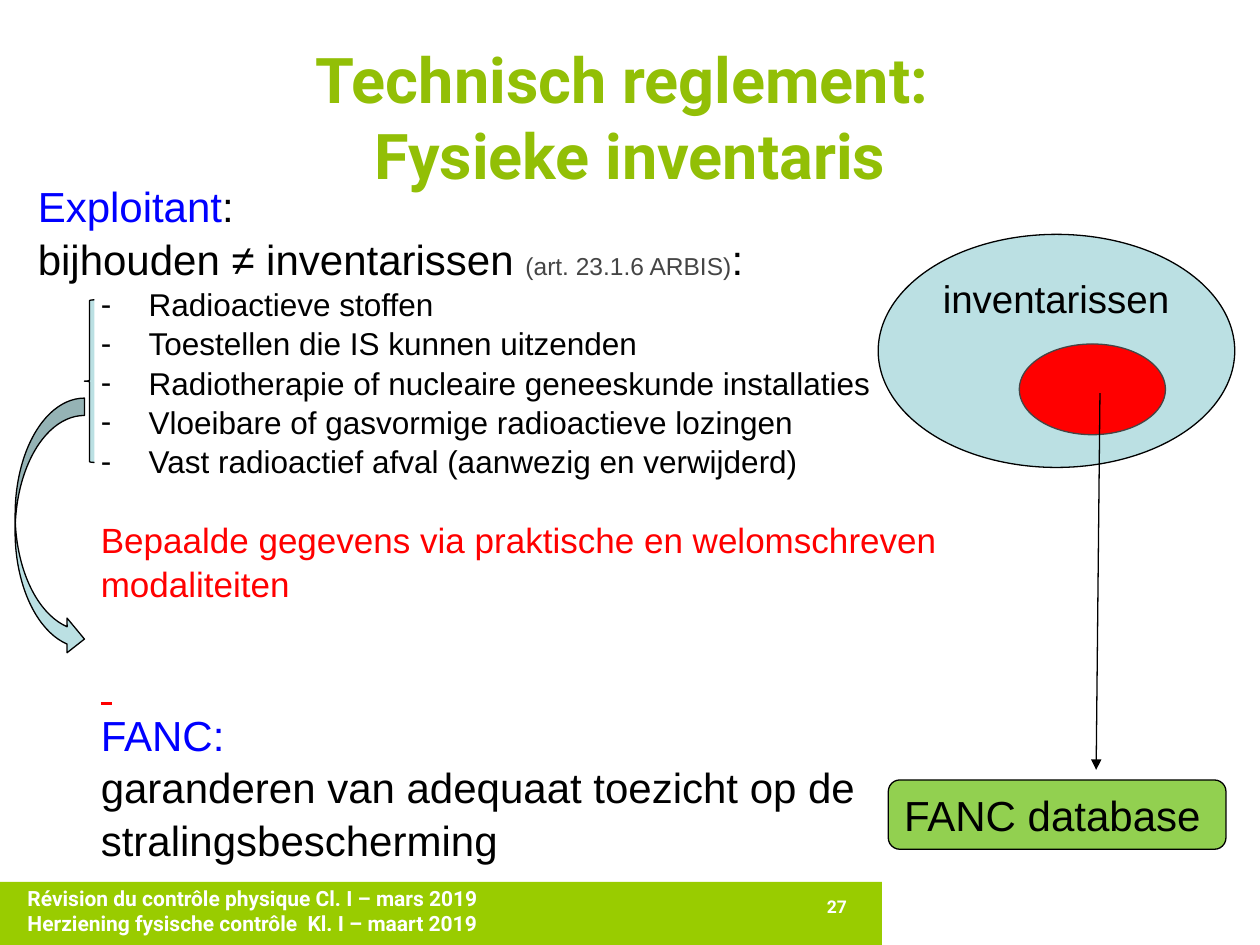
from typing import NamedTuple, Optional

from lxml import etree
from pptx import Presentation
from pptx.dml.color import RGBColor
from pptx.enum.shapes import MSO_CONNECTOR, MSO_SHAPE as Shape
from pptx.enum.text import MSO_ANCHOR, MSO_AUTO_SIZE, PP_ALIGN
from pptx.oxml.ns import qn
from pptx.util import Inches, Pt

COLORS = {
    "title": "92BF06", "bar": "99CC00", "pale": "BBE0E3", "red": "FF0000",
    "blue": "0000FF", "green": "92D050", "grey": "454545",
    "black": "000000", "white": "FFFFFF",
}


class Run(NamedTuple):
    text: str
    size: float = 24
    color: str = "black"
    underline: bool = False


class Para(NamedTuple):
    runs: list[Run]
    left: float = 0
    hanging: float = 0
    bullet: Optional[str] = None
    before: float = 0
    level: int = 0


class Figure(NamedTuple):
    kind: Shape
    box: tuple[float, float, float, float]
    fill: str
    line: Optional[str] = "black"
    label: str = ""
    size: float = 24


ITEMS = [
    "Radioactieve stoffen",
    "Toestellen die IS kunnen uitzenden",
    "Radiotherapie of nucleaire geneeskunde installaties",
    "Vloeibare of gasvormige radioactieve lozingen",
    "Vast radioactief afval (aanwezig en verwijderd)",
]

BODY = [
    Para([Run("Exploitant", color="blue"), Run(":")]),
    Para([Run("bijhouden ≠ inventarissen "),
          Run("(art. 23.1.6 ARBIS)", 14, "grey"), Run(":")]),
    *[Para([Run(item, 18)], 0.88, -0.38, "-", level=1) for item in ITEMS],
    Para([Run("Bepaalde gegevens via praktische en welomschreven modaliteiten",
              20, "red")], 0.5, before=21, level=1),
    Para([Run(" ", color="red", underline=True)], 0.5, before=29),
    Para([Run("FANC:", color="blue")], 0.5),
    Para([Run("garanderen van adequaat toezicht op de stralingsbescherming")], 0.5),
]

FIGURES = [
    Figure(Shape.RECTANGLE, (0, 7, 7, 0.5), "bar", None),
    Figure(Shape.OVAL, (6.97, 1.86, 2.83, 1.85), "pale", label="inventarissen", size=22),
    Figure(Shape.OVAL, (8.09, 2.73, 1.16, 0.72), "red", "grey"),
    Figure(Shape.ROUNDED_RECTANGLE, (7.05, 6.19, 2.68, 0.55), "green", label="FANC database"),
    Figure(Shape.LEFT_BRACE, (0.67, 2.38, 0.08, 1.29), "pale"),
    Figure(Shape.CURVED_RIGHT_ARROW, (0.12, 3.16, 0.55, 2.05), "pale"),
]


def rgb(name: str) -> RGBColor:
    return RGBColor.from_string(COLORS[name])


def place(sp, box: tuple[float, float, float, float]) -> None:
    sp.left, sp.top, sp.width, sp.height = map(Inches, box)


def add_text(p, text: str, *, size: float, color: str = "black", font: str = "Arial",
             bold: bool = False, underline: bool = False) -> None:
    """Add runs to a paragraph, with a line break at each newline."""
    for i, line in enumerate(text.split("\n")):
        if i:
            p.add_line_break()
        r = p.add_run()
        r.text = line
        f = r.font
        f.name, f.size, f.bold, f.underline = font, Pt(size), bold, underline
        f.color.rgb = rgb(color)


def add_para(p, para: Para) -> None:
    p.level = para.level
    p.line_spacing = 1.04
    p.space_before, p.space_after = Pt(para.before), Pt(0)
    pPr = p._p.get_or_add_pPr()
    pPr.set("marL", str(Inches(para.left)))
    pPr.set("indent", str(Inches(para.hanging)))
    if para.bullet:
        etree.SubElement(pPr, qn("a:buChar")).set("char", para.bullet)
    else:
        etree.SubElement(pPr, qn("a:buNone"))
    for run in para.runs:
        add_text(p, run.text, size=run.size, color=run.color, underline=run.underline)


def add_figure(s, figure: Figure) -> None:
    sp = s.shapes.add_shape(figure.kind, *map(Inches, figure.box))
    sp.shadow.inherit = False
    sp.fill.solid()
    sp.fill.fore_color.rgb = rgb(figure.fill)
    if figure.line:
        sp.line.color.rgb = rgb(figure.line)
        sp.line.width = Pt(0.75)
    else:
        sp.line.fill.background()
    if figure.label:
        tf = sp.text_frame
        tf.word_wrap = True
        tf.vertical_anchor = MSO_ANCHOR.TOP
        tf.margin_right = Inches(0.05)
        p = tf.paragraphs[0]
        p.alignment = PP_ALIGN.LEFT
        add_text(p, figure.label, size=figure.size)


def add_arrow(s, start: tuple[float, float], end: tuple[float, float]) -> None:
    c = s.shapes.add_connector(MSO_CONNECTOR.STRAIGHT, *map(Inches, start + end))
    c.line.color.rgb = rgb("black")
    c.line.width = Pt(0.75)
    etree.SubElement(c.line._get_or_add_ln(), qn("a:tailEnd")).set("type", "triangle")
    etree.SubElement(c._element.spPr, qn("a:effectLst"))


def add_footer(s, box: tuple[float, float, float, float], text: str, size: float,
               align: PP_ALIGN = PP_ALIGN.LEFT) -> None:
    tf = s.shapes.add_textbox(*map(Inches, box)).text_frame
    tf.word_wrap = True
    p = tf.paragraphs[0]
    p.alignment = align
    add_text(p, text, size=size, color="white", font="Roboto", bold=True)


def main() -> None:
    prs = Presentation()
    prs.slide_width, prs.slide_height = Inches(10), Inches(7.5)
    s = prs.slides.add_slide(prs.slide_layouts[1])

    title, body = s.placeholders
    place(title, (0.5, 0.3, 9, 1.25))
    title.text_frame.auto_size = MSO_AUTO_SIZE.NONE
    p = title.text_frame.paragraphs[0]
    p.alignment = PP_ALIGN.CENTER
    add_text(p, "Technisch reglement: \nFysieke inventaris", size=36,
             color="title", font="Roboto", bold=True)

    place(body, (0.2, 1.37, 8.43, 7.44))
    tf = body.text_frame
    tf.auto_size = MSO_AUTO_SIZE.NONE
    for i, para in enumerate(BODY):
        add_para(tf.add_paragraph() if i else tf.paragraphs[0], para)

    for figure in FIGURES:
        add_figure(s, figure)
    add_arrow(s, (8.73, 3.12), (8.7, 6.11))

    add_footer(s, (6.1, 7.06, 0.72, 0.39), "27", 10, PP_ALIGN.RIGHT)
    add_footer(s, (0.12, 6.98, 6.3, 0.52),
               "Révision du contrôle physique Cl. I – mars 2019\n"
               "Herziening fysische contrôle  Kl. I – maart 2019", 12)
    prs.save("out.pptx")


if __name__ == "__main__":
    main()
